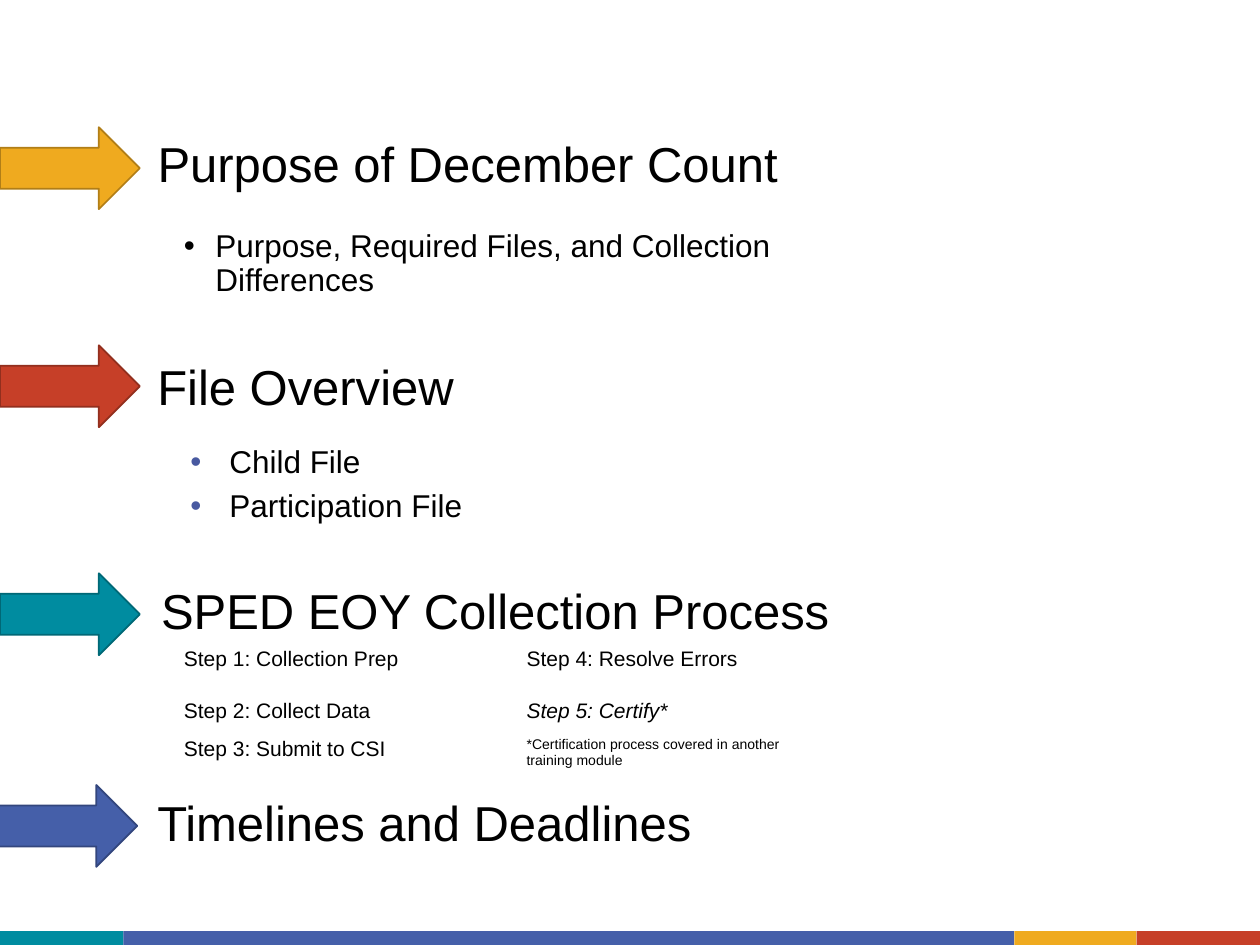
from dataclasses import dataclass
from typing import Optional

from lxml import etree
from pptx import Presentation
from pptx import util as u
from pptx.dml.color import RGBColor
from pptx.enum import shapes, text
from pptx.oxml.ns import qn


@dataclass(frozen=True)
class Theme:
    font: str = "Arial"
    text: str = "000000"
    gold: str = "EFAA1F"
    red: str = "C63F28"
    teal: str = "008CA0"
    blue: str = "455FA9"
    bullet: str = "4859A0"
    heading_pt: int = 28
    list_pt: int = 18
    step_pt: int = 12
    note_pt: int = 8


@dataclass(frozen=True)
class Box:
    left: float
    top: float
    width: float
    height: float

    def lengths(self) -> list:
        return [u.Inches(v) for v in (self.left, self.top, self.width, self.height)]


@dataclass(frozen=True)
class Section:
    heading: str
    box: Box
    arrow_left: float
    arrow_top: float
    fill: str
    line: str


@dataclass(frozen=True)
class BulletList:
    items: tuple
    box: Box
    level: int
    margin: float
    hanging: float
    before: int = 0
    after: int = 0
    color: Optional[str] = None


T = Theme()
ARROW_W, ARROW_H = 1.11, 0.65
BAR_TOP, BAR_H = 7.39, 0.11
BAR = ((T.teal, 0.98), (T.blue, 7.07), (T.gold, 0.97), (T.red, 0.98))

SECTIONS = (
    Section("Purpose of December Count", Box(1.15, 1.06, 6.68, 0.71), 0, 1.01, T.gold, "B17E17"),
    Section("File Overview", Box(1.15, 2.83, 6.68, 0.71), 0, 2.74, T.red, "922F1E"),
    Section("SPED EOY Collection Process", Box(1.18, 4.61, 6.27, 0.53), 0, 4.55, T.teal, "006876"),
    Section("Timelines and Deadlines", Box(1.15, 6.29, 6.27, 0.53), -0.02, 6.23, T.blue, "33467D"),
)
LISTS = (
    BulletList(("Purpose, Required Files, and Collection Differences",),
               Box(1.36, 1.78, 5.59, 0.62), 0, 0.25, 0.25),
    BulletList(("Child File", "Participation File"),
               Box(1.19, 3.49, 4.03, 1.09), 1, 0.53, 0.31, 2, 4, T.bullet),
)
STEP_BOX = Box(1.36, 5.09, 5.26, 1.07)
STEP_COLS = (2.72, 2.54)
STEP_ROWS = (0.41, 0.30, 0.36)
STEPS = (
    ("Step 1: Collection Prep", "Step 4: Resolve Errors"),
    ("Step 2: Collect Data", "Step 5: Certify*"),
    ("Step 3: Submit to CSI", "*Certification process covered in another training module"),
)
STEP_FORMATS = {(1, 1): {"italic": True}, (2, 1): {"size": u.Pt(T.note_pt)}}


def set_all(target, values: dict) -> None:
    for name, value in values.items():
        setattr(target, name, value)


def write(p, words: str, **font) -> None:
    r = p.add_run()
    r.text = words
    set_all(r.font, {"name": T.font, "bold": False, **font})
    r.font.color.rgb = RGBColor.from_string(T.text)


def place(sp, box: Box) -> None:
    """Move a text shape to its box and give it top-anchored, wrapped text."""
    set_all(sp, dict(zip(("left", "top", "width", "height"), box.lengths())))
    set_all(sp.text_frame, {"word_wrap": True, "auto_size": text.MSO_AUTO_SIZE.NONE,
                            "vertical_anchor": text.MSO_ANCHOR.TOP})


def add_block(s, kind, box: Box, fill: str, line: Optional[str] = None) -> None:
    sp = s.shapes.add_shape(kind, *box.lengths())
    sp.shadow.inherit = False
    sp.fill.solid()
    sp.fill.fore_color.rgb = RGBColor.from_string(fill)
    if line:
        sp.line.color.rgb = RGBColor.from_string(line)
        sp.line.width = u.Pt(1)
    else:
        sp.line.fill.background()


def add_bar(s) -> None:
    left = 0.0
    for color, width in BAR:
        add_block(s, shapes.MSO_SHAPE.RECTANGLE, Box(left, BAR_TOP, width, BAR_H), color)
        left += width


def add_section(s, section: Section, sp) -> None:
    add_block(s, shapes.MSO_SHAPE.RIGHT_ARROW,
              Box(section.arrow_left, section.arrow_top, ARROW_W, ARROW_H),
              section.fill, section.line)
    place(sp, section.box)
    p = sp.text_frame.paragraphs[0]
    set_all(p, {"alignment": text.PP_ALIGN.LEFT, "line_spacing": 0.9, "space_before": u.Pt(0)})
    write(p, section.heading, size=u.Pt(T.heading_pt))


def add_bullet(p, margin: float, hanging: float, color: Optional[str]) -> None:
    pPr = p._p.get_or_add_pPr()
    pPr.set("marL", str(u.Inches(margin)))
    pPr.set("indent", str(-u.Inches(hanging)))
    if color:
        clr = etree.SubElement(pPr, qn("a:buClr"))
        etree.SubElement(clr, qn("a:srgbClr"), val=color)
    etree.SubElement(pPr, qn("a:buFont"), typeface=T.font)
    etree.SubElement(pPr, qn("a:buChar"), char="•")


def fill_list(sp, spec: BulletList) -> None:
    place(sp, spec.box)
    tf = sp.text_frame
    for i, item in enumerate(spec.items):
        p = tf.add_paragraph() if i else tf.paragraphs[0]
        add_bullet(p, spec.margin, spec.hanging, spec.color)
        set_all(p, {"level": spec.level, "line_spacing": 0.9,
                    "space_before": u.Pt(spec.before if i else 0),
                    "space_after": u.Pt(spec.after)})
        write(p, item, size=u.Pt(T.list_pt))


def add_steps(s) -> None:
    table = s.shapes.add_table(len(STEPS), len(STEP_COLS), *STEP_BOX.lengths()).table
    set_all(table, {"first_row": False, "horz_banding": False})
    for column, width in zip(table.columns, STEP_COLS):
        column.width = u.Inches(width)
    for r, (row, height) in enumerate(zip(STEPS, STEP_ROWS)):
        table.rows[r].height = u.Inches(height)
        for c, words in enumerate(row):
            cell = table.cell(r, c)
            cell.fill.background()
            font = {"size": u.Pt(T.step_pt), **STEP_FORMATS.get((r, c), {})}
            write(cell.text_frame.paragraphs[0], words, **font)


def main() -> None:
    prs = Presentation()
    set_all(prs, {"slide_width": u.Inches(10), "slide_height": u.Inches(7.5)})
    s = prs.slides.add_slide(prs.slide_layouts.get_by_name("Two Content"))
    bodies = [s.placeholders[1], s.placeholders[2]]
    add_bar(s)
    for i, section in enumerate(SECTIONS):
        sp = s.shapes.add_textbox(*section.box.lengths()) if i else s.shapes.title
        add_section(s, section, sp)
    for body, spec in zip(bodies, LISTS):
        fill_list(body, spec)
    add_steps(s)
    prs.save("out.pptx")


if __name__ == "__main__":
    main()
